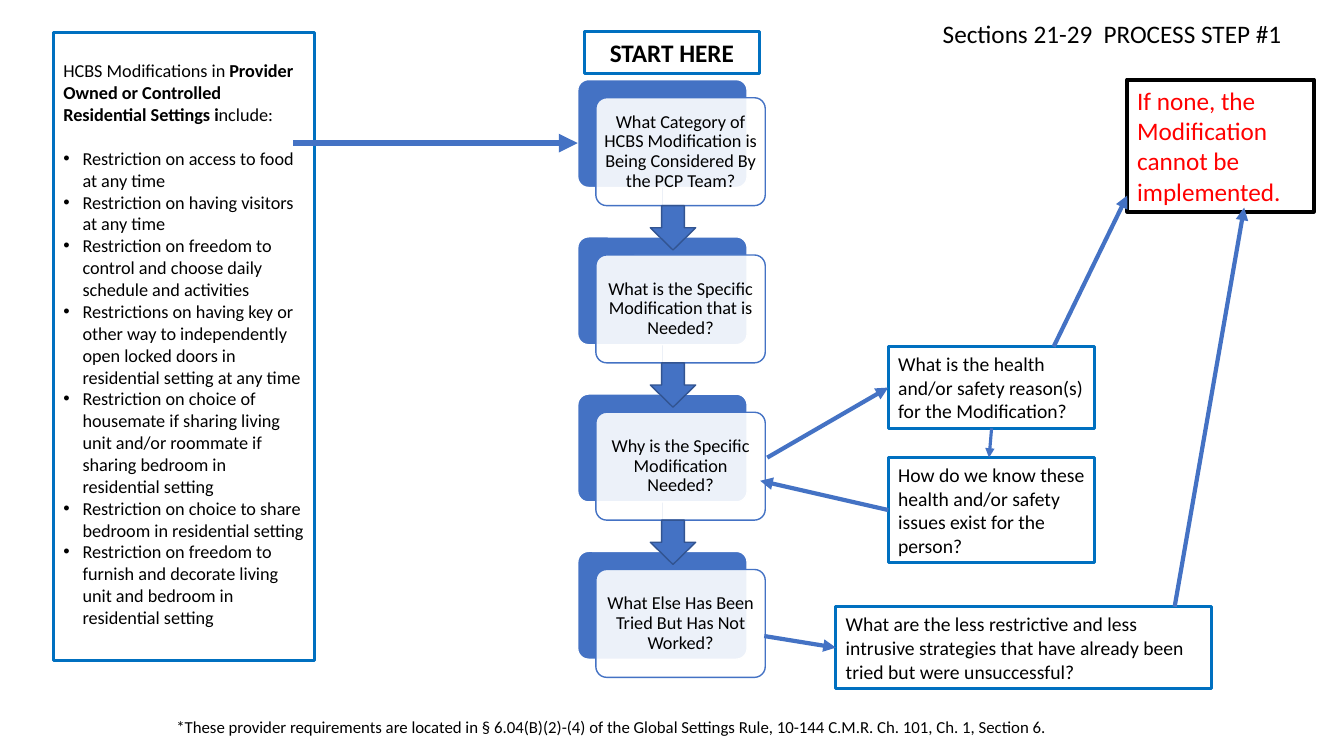
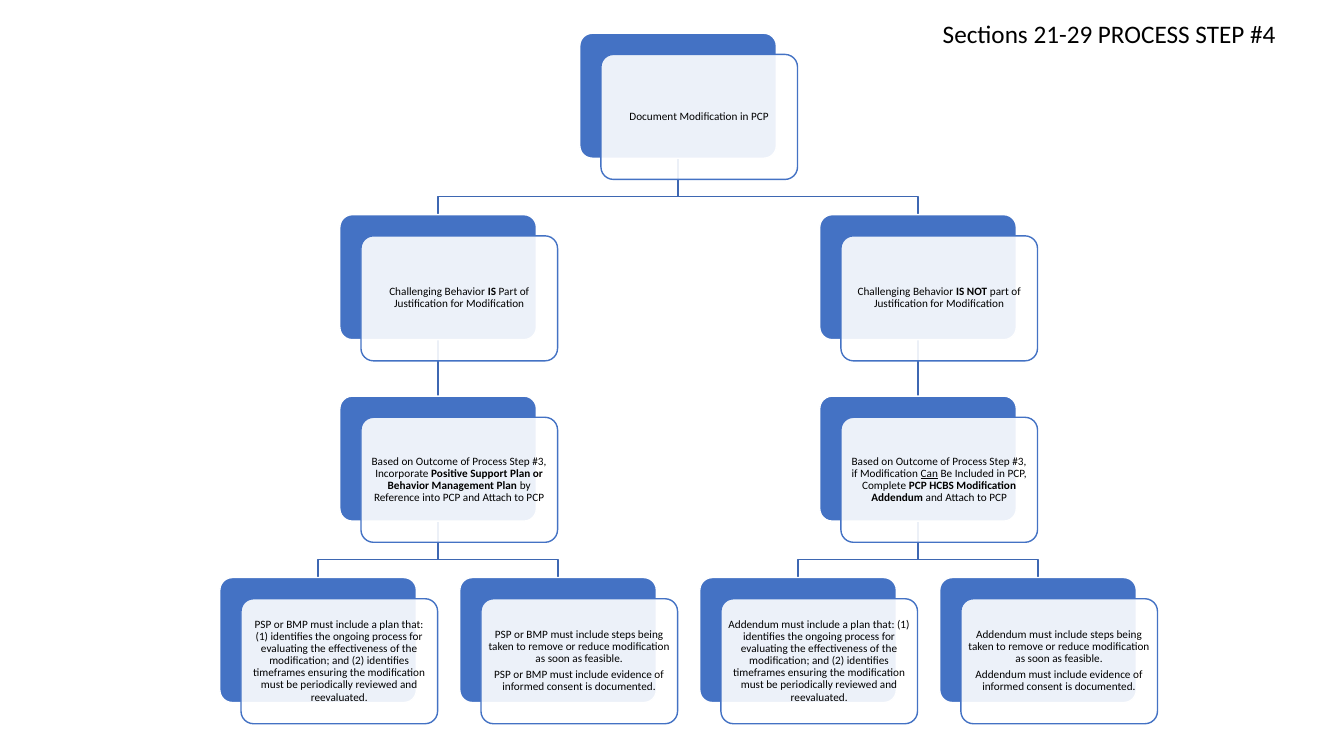
from lxml import etree
from pptx import Presentation
from pptx.dml.color import RGBColor
from pptx.enum.shapes import MSO_CONNECTOR as LINE, MSO_SHAPE as SHAPE
from pptx.enum.text import MSO_ANCHOR as ANCHOR, MSO_AUTO_SIZE as AUTO, PP_ALIGN as ALIGN
from pptx.oxml.ns import qn
from pptx.util import Inches, Pt

FONT = "Calibri"
BLACK, WHITE, RED = "000000", "FFFFFF", "FF0000"
BLUE, BOX_BLUE, LINK_BLUE, ARROW_EDGE = "4472C4", "0070C0", "3E67B2", "325491"
TOP, LEFT, BOTTOM = 0, 1, 2  # connection sites

# A paragraph is a string, or a list of plain strings and (text, style) pairs.
STEP_1_TITLE = "Sections 21-29  PROCESS STEP #1"
QUESTIONS = [
    "What Category of HCBS Modification is Being Considered By the PCP Team?",
    "What is the Specific Modification that is Needed?",
    "Why is the Specific Modification Needed?",
    "What Else Has Been Tried But Has Not Worked?",
]
SETTINGS_INTRO = [
    "HCBS Modifications in ",
    ("Provider Owned or Controlled Residential Settings i", "bold"),
    "nclude:",
]
RESTRICTIONS = [
    "Restriction on access to food at any time",
    "Restriction on having visitors at any time",
    "Restriction on freedom to control and choose daily schedule and activities",
    "Restrictions on having key or other way to independently open locked doors in "
    "residential setting at any time",
    "Restriction on choice of housemate if sharing living unit and/or roommate if "
    "sharing bedroom in residential setting",
    "Restriction on choice to share bedroom in residential setting",
    "Restriction on freedom to furnish and decorate living unit and bedroom in "
    "residential setting",
]
# name: (left, top, width, height), paragraph, size, text colour, line colour, line width
BOXES = {
    "start": ((5.8, 0.31, 1.73, 0.42), [("START HERE", "bold")], 18, BLACK, BOX_BLUE, 2.25),
    "reason": ((8.81, 3.44, 2.05, 0.81),
               "What is the health and/or safety reason(s) for the Modification?",
               14, BLACK, BOX_BLUE, 2.25),
    "evidence": ((8.81, 4.54, 2.05, 1.04),
                 "How do we know these health and/or safety issues exist for the person?",
                 14, BLACK, BOX_BLUE, 2.25),
    "strategies": ((8.29, 6.02, 3.73, 0.81),
                   "What are the less restrictive and less intrusive strategies that have "
                   "already been tried but were unsuccessful?",
                   14, BLACK, BOX_BLUE, 2.25),
    "none": ((11.18, 0.79, 1.85, 1.31),
             "If none, the Modification cannot be implemented.", 18, RED, BLACK, 3),
}
# start, end, width, joined box and site at the start, the same at the end
ARROWS = [
    ((2.91, 1.42), (5.73, 1.42), 4.5, None, None),
    ((7.61, 4.54), (8.81, 3.85), 3, None, ("reason", LEFT)),
    ((9.84, 4.25), (9.81, 4.54), 2.25, ("reason", BOTTOM), None),
    ((8.81, 5.06), (7.54, 4.77), 3, ("evidence", LEFT), None),
    ((10.45, 3.44), (11.18, 1.94), 3, None, None),
    ((11.65, 6.02), (12.34, 2.06), 3, None, None),
    ((7.58, 6.31), (8.29, 6.42), 3, None, ("strategies", LEFT)),
]
FOOTNOTE = ("*These provider requirements are located in § 6.04(B)(2)-(4) of the Global "
            "Settings Rule, 10-144 C.M.R. Ch. 101, Ch. 1, Section 6.")

STEP_4_TITLE = "Sections 21-29 PROCESS STEP #4"
PLAN_TEXT = (" must include a plan that: (1) identifies the ongoing process for evaluating the "
             "effectiveness of the modification; and (2) identifies timeframes ensuring the "
             "modification must be periodically reviewed and reevaluated.")
STEPS_TEXT = (" must include steps being taken to remove or reduce modification as soon as "
              "feasible.")
CONSENT_TEXT = " must include evidence of informed consent is documented."
# name: (column, level, parent, paragraphs)
DECISIONS = {
    "document": (1.5, 0, None, ["Document Modification in PCP"]),
    "is": (0.5, 1, "document", [
        ["Challenging Behavior ", ("IS", "bold"), " Part of Justification for Modification"]]),
    "plan": (0.5, 2, "is", [
        ["Based on Outcome of Process Step #3, Incorporate ",
         ("Positive Support Plan or Behavior Management Plan ", "bold"),
         "by Reference into PCP and Attach to PCP"]]),
    "plan review": (0, 3, "plan", ["PSP or BMP" + PLAN_TEXT]),
    "plan steps": (1, 3, "plan", ["PSP or BMP" + STEPS_TEXT, "PSP or BMP" + CONSENT_TEXT]),
    "is not": (2.5, 1, "document", [
        ["Challenging Behavior ", ("IS NOT ", "bold"), "part of Justification for Modification"]]),
    "addendum": (2.5, 2, "is not", [
        ["Based on Outcome of Process Step #3, if Modification ", ("Can", "underline"),
         " Be Included in PCP, Complete ", ("PCP HCBS Modification Addendum ", "bold"),
         "and Attach to PCP"]]),
    "addendum review": (2, 3, "addendum", ["Addendum" + PLAN_TEXT]),
    "addendum steps": (3, 3, "addendum", ["Addendum" + STEPS_TEXT, "Addendum" + CONSENT_TEXT]),
}


def rgb(value):
    return RGBColor.from_string(value)


def inches(values):
    return [Inches(value) for value in values]


def write(shape, paragraphs, size, color=BLACK, align=ALIGN.LEFT, anchor=ANCHOR.TOP):
    """Fill the shape with formatted paragraphs and return them."""
    frame = shape.text_frame
    frame.word_wrap = True
    frame.auto_size = AUTO.NONE
    frame.vertical_anchor = anchor
    for index, content in enumerate(paragraphs):
        paragraph = frame.add_paragraph() if index else frame.paragraphs[0]
        paragraph.alignment = align
        for part in [content] if isinstance(content, str) else content:
            text, style = (part, None) if isinstance(part, str) else part
            run = paragraph.add_run()
            run.text = text
            font = run.font
            font.name, font.size, font.color.rgb = FONT, Pt(size), rgb(color)
            font.bold = style == "bold"
            font.underline = style == "underline"
    return frame.paragraphs


def add_outline(slide, kind, place, line, width, fill=None):
    shape = slide.shapes.add_shape(kind, *inches(place))
    shape.shadow.inherit = False
    shape.line.color.rgb, shape.line.width = rgb(line), Pt(width)
    if fill:
        shape.fill.solid()
        shape.fill.fore_color.rgb = rgb(fill)
    else:
        shape.fill.background()
    return shape


def add_card(slide, place, offset, paragraphs, size, inset):
    """Add a blue card with a translucent white one over it; return the blue one."""
    left, top, width, height = place
    back = add_outline(slide, SHAPE.ROUNDED_RECTANGLE, place, WHITE, 1, BLUE)
    front = add_outline(slide, SHAPE.ROUNDED_RECTANGLE,
                        (left + offset, top + offset, width, height), BLUE, 1, WHITE)
    back.adjustments[0] = front.adjustments[0] = 0.1
    fill_color = front.element.spPr.find(qn("a:solidFill"))[0]
    etree.SubElement(fill_color, qn("a:alpha"), val="90000")
    frame = front.text_frame
    frame.margin_left = frame.margin_right = Inches(inset)
    frame.margin_top = frame.margin_bottom = Inches(inset)
    for paragraph in write(front, paragraphs, size, align=ALIGN.CENTER, anchor=ANCHOR.MIDDLE):
        paragraph.line_spacing = 0.9
        paragraph.space_after = Pt(0.35 * size)
    return back


def add_line(slide, start, end, color, width):
    line = slide.shapes.add_connector(LINE.STRAIGHT, *start, *end)
    line.line.color.rgb, line.line.width = rgb(color), Pt(width)
    etree.SubElement(line.element.spPr, qn("a:effectLst"))
    return line


def link_cards(slide, parent, child):
    """Run a line from parent to child, behind all cards."""
    start = parent.left + parent.width // 2, parent.top + parent.height
    end = child.left + child.width // 2, child.top
    if abs(start[0] - end[0]) < Inches(0.01):
        link = add_line(slide, start, end, LINK_BLUE, 1)
        link.begin_connect(parent, BOTTOM)
        link.end_connect(child, TOP)
    else:
        bend = start[1] + round(0.68 * (end[1] - start[1]))
        builder = slide.shapes.build_freeform(*start)
        builder.add_line_segments([(start[0], bend), (end[0], bend), end], close=False)
        link = builder.convert_to_shape()
        link.shadow.inherit = False
        link.fill.background()
        link.line.color.rgb, link.line.width = rgb(LINK_BLUE), Pt(1)
    link.element.getparent().insert(2, link.element)


def add_step_slide(deck, heading):
    slide = deck.slides.add_slide(deck.slide_layouts[5])
    title = slide.shapes.title
    title.left, title.top, title.width, title.height = inches((9.25, 0.13, 3.91, 0.4))
    write(title, [heading], 18)
    return slide


def add_settings_list(slide):
    box = add_outline(slide, SHAPE.RECTANGLE, (0.53, 0.32, 2.59, 6.23), BOX_BLUE, 2.25)
    box.text_frame.margin_top = Inches(0.27)
    intro, *items = write(box, [SETTINGS_INTRO, *RESTRICTIONS], 13)
    intro.space_after = Pt(15.8)
    for item in items:
        properties = item._p.get_or_add_pPr()
        properties.set("marL", str(Inches(0.19)))
        properties.set("indent", str(-Inches(0.19)))
        etree.SubElement(properties, qn("a:buFont"), typeface="Arial")
        etree.SubElement(properties, qn("a:buChar"), char="•")


def build_questions(deck):
    slide = add_step_slide(deck, STEP_1_TITLE)
    left, top, width, height, pitch, offset = 5.73, 0.79, 1.68, 1.07, 1.56, 0.18
    tops = [top + pitch * row for row in range(len(QUESTIONS))]
    cards = [add_card(slide, (left, y, width, height), offset, [question], 13, 0.05)
             for y, question in zip(tops, QUESTIONS)]
    for parent, child in zip(cards, cards[1:]):
        link_cards(slide, parent, child)
    for y in tops[:-1]:
        add_outline(slide, SHAPE.DOWN_ARROW, (6.45, y + height + offset, 0.45, 0.44),
                    ARROW_EDGE, 1, BLUE)

    add_settings_list(slide)
    boxes = {}
    for name, (place, text, size, color, line, line_width) in BOXES.items():
        boxes[name] = add_outline(slide, SHAPE.RECTANGLE, place, line, line_width)
        align = ALIGN.CENTER if name == "start" else ALIGN.LEFT
        write(boxes[name], [text], size, color, align, ANCHOR.MIDDLE)
    for start, end, line_width, source, target in ARROWS:
        arrow = add_line(slide, inches(start), inches(end), BLUE, line_width)
        if source:
            arrow.begin_connect(boxes[source[0]], source[1])
        if target:
            arrow.end_connect(boxes[target[0]], target[1])
        etree.SubElement(arrow.line._get_or_add_ln(), qn("a:tailEnd"), type="triangle")
    write(slide.shapes.add_textbox(*inches((1.65, 7.06, 10.59, 0.3))), [FOOTNOTE], 12)


def build_decisions(deck):
    slide = add_step_slide(deck, STEP_4_TITLE)
    cards = {}
    for name, (column, level, _, paragraphs) in DECISIONS.items():
        place = (2.18 + 2.38 * column, 0.33 + 1.8 * level, 1.95, 1.24)
        cards[name] = add_card(slide, place, 0.21, paragraphs, 8, 0.03)
    for name, (_, _, parent, _) in DECISIONS.items():
        if parent:
            link_cards(slide, cards[parent], cards[name])


def main():
    deck = Presentation()
    deck.slide_width, deck.slide_height = Inches(13.33), Inches(7.5)
    build_questions(deck)
    build_decisions(deck)
    deck.save("out.pptx")


if __name__ == "__main__":
    main()
